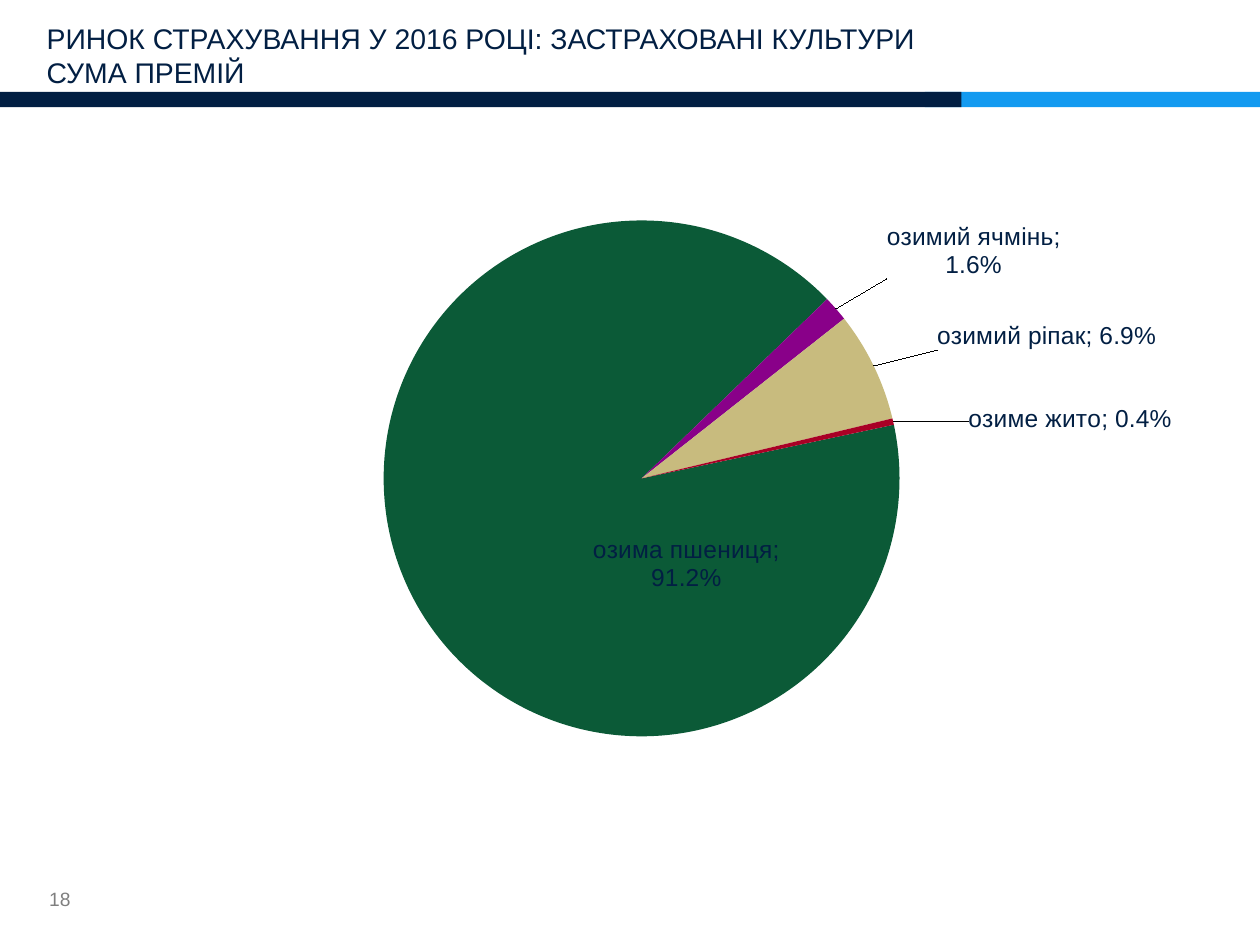
from dataclasses import dataclass

from lxml import etree
from pptx import Presentation
from pptx.chart import data as cd
from pptx.dml.color import RGBColor
from pptx.enum import chart as ce, shapes, text
from pptx.oxml import ns, parse_xml
from pptx.util import Inches, Pt

NAVY, BLUE, GREY = "021F43", "139AF0", "7F7F7F"
FONT = "Arial"


@dataclass
class Crop:
    name: str
    share: float
    color: str
    label_dx: float
    label_dy: float
    label_pos: str


@dataclass
class Bar:
    left: float
    width: float
    color: str


CROPS = [
    Crop("озима пшениця", 0.912, "0B5A37", 0.14, 0.04, "ctr"),
    Crop("озимий ячмінь", 0.016, "890089", 0.04, -0.04, "outEnd"),
    Crop("озимий ріпак", 0.069, "C8BB7E", 0.05, -0.02, "outEnd"),
    Crop("озиме жито", 0.004, "A90025", 0.06, 0.02, "outEnd"),
]
BARS = [Bar(7.34, 2.66, BLUE), Bar(0, 7.63, NAVY)]
TITLE = ["РИНОК СТРАХУВАННЯ У 2016 РОЦІ: ЗАСТРАХОВАНІ КУЛЬТУРИ", "СУМА ПРЕМІЙ"]


def rgb(value: str) -> RGBColor:
    return RGBColor.from_string(value)


def style_font(font, size: float, color: str) -> None:
    font.name, font.size, font.bold = FONT, Pt(size), False
    font.color.rgb = rgb(color)


def set_frame(tf, anchor) -> None:
    tf.margin_left = tf.margin_right = tf.margin_top = tf.margin_bottom = 0
    tf.word_wrap = True
    tf.auto_size = text.MSO_AUTO_SIZE.NONE
    tf.vertical_anchor = anchor


def add_bar(s, bar: Bar) -> None:
    sp = s.shapes.add_shape(shapes.MSO_SHAPE.RECTANGLE, Inches(bar.left),
                            Inches(0.73), Inches(bar.width), Inches(0.12))
    sp.shadow.inherit = False
    sp.fill.solid()
    sp.fill.fore_color.rgb = rgb(bar.color)
    sp.line.fill.background()


def add_title(s) -> None:
    sp = s.shapes.title
    sp.left, sp.top = Inches(0.37), Inches(0.25)
    sp.width, sp.height = Inches(9.52), Inches(0.46)
    tf = sp.text_frame
    set_frame(tf, text.MSO_ANCHOR.BOTTOM)
    p = tf.paragraphs[0]
    p.alignment = text.PP_ALIGN.LEFT
    p.line_spacing = 1.0
    p.add_run().text = TITLE[0]
    p.add_line_break()
    p.add_run().text = TITLE[1]
    style_font(p.font, 16.2, NAVY)


def add_page_number(s) -> None:
    sp = s.shapes.add_textbox(Inches(0.39), Inches(6.94), Inches(0.6), Inches(0.39))
    set_frame(sp.text_frame, text.MSO_ANCHOR.MIDDLE)
    p = sp.text_frame.paragraphs[0]
    p.text = "18"
    style_font(p.font, 11, GREY)


def manual_layout(x: float, y: float, extra: str = "", size: str = "") -> str:
    return (f"<c:layout><c:manualLayout>{extra}<c:x val='{x}'/><c:y val='{y}'/>"
            f"{size}</c:manualLayout></c:layout>")


def crop_label(index: int, crop: Crop) -> etree._Element:
    return parse_xml(
        f"<c:dLbl {ns.nsdecls('c')}><c:idx val='{index}'/>"
        f"{manual_layout(crop.label_dx, crop.label_dy)}"
        "<c:numFmt formatCode='0.0%' sourceLinked='0'/>"
        f"<c:dLblPos val='{crop.label_pos}'/><c:showLegendKey val='0'/>"
        "<c:showVal val='1'/><c:showCatName val='1'/><c:showSerName val='0'/>"
        "<c:showPercent val='0'/><c:showBubbleSize val='0'/>"
        "<c:separator>; </c:separator></c:dLbl>")


def add_pie(s) -> None:
    data = cd.CategoryChartData(number_format="0.0%")
    data.categories = [crop.name for crop in CROPS]
    data.add_series("Series 1", [crop.share for crop in CROPS])
    chart = s.shapes.add_chart(ce.XL_CHART_TYPE.PIE, Inches(0.39), Inches(1.33),
                               Inches(9), Inches(5), data).chart
    chart.has_legend = chart.has_title = False
    style_font(chart.font, 14, NAVY)
    plot = chart.plots[0]
    plot.vary_by_categories = True
    series = plot.series[0]
    labels = series.data_labels
    labels.show_value = labels.show_category_name = True
    labels.number_format, labels.number_format_is_linked = "0.0%", False
    style_font(labels.font, 14, NAVY)
    for i, crop in enumerate(CROPS):
        fmt = series.points[i].format
        fmt.fill.solid()
        fmt.fill.fore_color.rgb = rgb(crop.color)
        fmt.line.fill.background()
        labels._element.insert(i, crop_label(i, crop))

    pie = plot._element
    for old in pie.findall(ns.qn("c:firstSliceAng")):
        pie.remove(old)
    pie.append(parse_xml(f"<c:firstSliceAng {ns.nsdecls('c')} val='78'/>"))
    area = pie.getparent()
    for old in area.findall(ns.qn("c:layout")):
        area.remove(old)
    layout = manual_layout(
        0.295, 0.084,
        "<c:layoutTarget val='inner'/><c:xMode val='edge'/><c:yMode val='edge'/>",
        "<c:w val='0.455'/><c:h val='0.819'/>")
    area.insert(0, parse_xml(layout.replace(
        "<c:layout>", f"<c:layout {ns.nsdecls('c')}>", 1)))


def main() -> None:
    prs = Presentation()
    prs.slide_width, prs.slide_height = Inches(10), Inches(7.5)
    s = prs.slides.add_slide(prs.slide_layouts[5])
    for bar in BARS:
        add_bar(s, bar)
    add_page_number(s)
    add_title(s)
    add_pie(s)
    prs.save("out.pptx")


if __name__ == "__main__":
    main()
